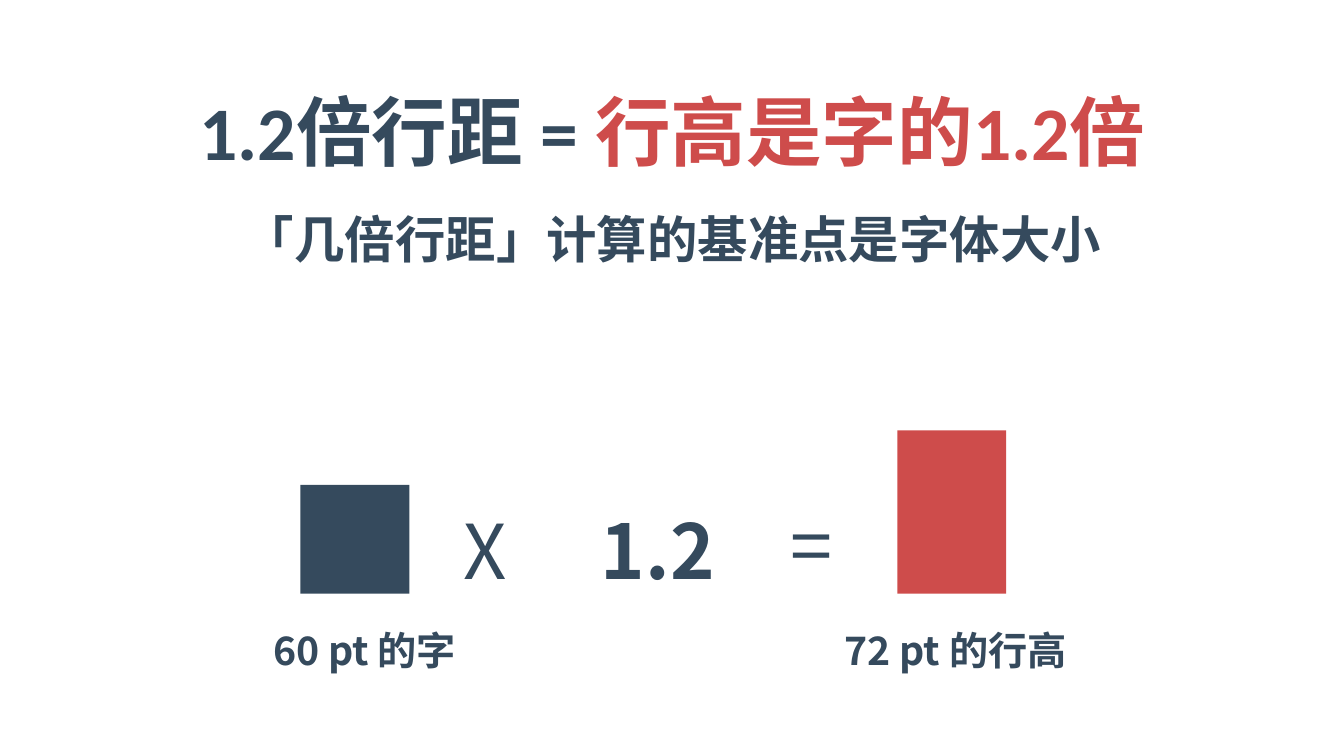
from pptx import Presentation
from pptx.dml.color import RGBColor
from pptx.enum.shapes import MSO_SHAPE as SHAPE
from pptx.enum.text import MSO_ANCHOR as ANCHOR, MSO_AUTO_SIZE as FIT, PP_ALIGN as ALIGN
from pptx.oxml.ns import qn
from pptx.util import Pt
from lxml import etree

PX = 9144  # EMU per px, 100 px to the inch
COLORS = {"navy": "354A5D", "red": "CE4C4B", "white": "FFFFFF"}
CJK = "Noto Sans CJK SC"


def rgb(name):
    return RGBColor.from_string(COLORS[name])


def emu(*lengths):
    return [n * PX for n in lengths]


def set_font(font, size, latin=CJK, bold=True):
    """Set the Latin face and the same East Asian face for every text."""
    font.size, font.bold, font.name = Pt(size), bold, latin
    font.color.rgb = rgb("navy")
    ea = etree.Element(qn("a:ea"), typeface=CJK)
    font._element.find(qn("a:latin")).addnext(ea)


def add_label(slide, text, box, size, align=ALIGN.CENTER, bold=True):
    sp = slide.shapes.add_textbox(*emu(*box))
    tf = sp.text_frame
    tf.word_wrap, tf.auto_size = True, FIT.SHAPE_TO_FIT_TEXT
    p = tf.paragraphs[0]
    p.text, p.alignment, p.line_spacing = text, align, 1.5
    set_font(p.font, size, bold=bold)


def add_block(slide, color, box):
    sp = slide.shapes.add_shape(SHAPE.RECTANGLE, *emu(*box))
    sp.shadow.inherit = False
    sp.fill.solid()
    sp.fill.fore_color.rgb = rgb(color)
    sp.line.fill.background()


def add_heading(slide, x, y, w, h):
    title = slide.shapes.title
    title.left, title.top, title.width, title.height = emu(x, y, w, 101)
    tf = title.text_frame
    tf.word_wrap, tf.auto_size = True, FIT.SHAPE_TO_FIT_TEXT
    tf.vertical_anchor = ANCHOR.TOP
    p = tf.paragraphs[0]
    p.alignment = ALIGN.CENTER
    set_font(p.font, 54, latin="Calibri")
    for text, color in (("1.2倍行距 = ", "navy"), ("行高是字的1.2倍", "red")):
        r = p.add_run()
        r.text = text
        r.font.color.rgb = rgb(color)
    subtitle_h = 91
    add_label(slide, "「几倍行距」计算的基准点是字体大小",
              (x + 129, y + h - subtitle_h, 1016, subtitle_h), 36)


def add_equation(slide, x, y, w, h):
    """Character block times 1.2 equals line-height block, with captions."""
    side, caption_h = 108, 81
    line_h = side * 3 // 2
    base = y + line_h
    add_block(slide, "navy", (x + 62, base - side, side, side))
    add_block(slide, "red", (x + 654, y, side, line_h))

    for text, left, top, width, align, bold in (
            ("X", 214, 23, 131, ALIGN.LEFT, False),
            ("1.2", 334, 23, 165, ALIGN.CENTER, True),
            ("=", 538, 18, 131, ALIGN.LEFT, False)):
        add_label(slide, text, (x + left, y + top, width, 130), 54, align, bold)

    for text, left, width in (("60 pt 的字", x, 251),
                              ("72 pt 的行高", x + w - 300, 300)):
        add_label(slide, text, (left, y + h - caption_h, width, caption_h), 28)


def main():
    prs = Presentation()
    prs.slide_width, prs.slide_height = emu(1333, 750)
    slide = prs.slides.add_slide(prs.slide_layouts[5])
    slide.background.fill.solid()
    slide.background.fill.fore_color.rgb = rgb("white")
    add_heading(slide, 30, 79, 1274, 184)
    add_equation(slide, 236, 427, 862, 247)
    prs.save("out.pptx")


if __name__ == "__main__":
    main()
